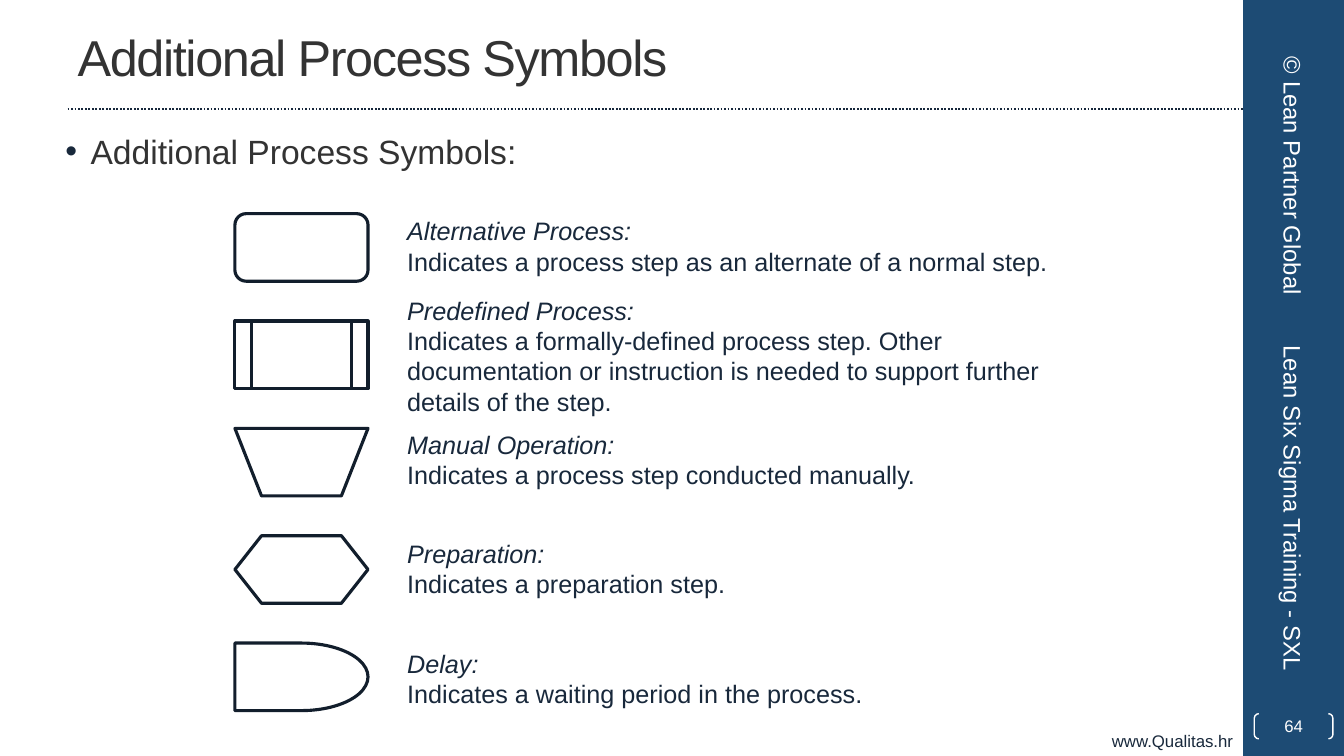
from lxml.etree import SubElement
from pptx import Presentation
from pptx.dml.color import RGBColor
from pptx.enum.dml import MSO_LINE as Dash
from pptx.enum.shapes import MSO_CONNECTOR as Link, MSO_SHAPE as Kind
from pptx.enum.text import MSO_ANCHOR as Anchor, PP_ALIGN as Align
from pptx.oxml.ns import qn
from pptx.util import Inches, Pt

WHITE, BLUE, NAVY = "FFFFFF", "1D4B74", "17273B"
INK, GREY, EDGE = "18283B", "333333", "121E2C"

STEPS = [
    (Kind.FLOWCHART_ALTERNATE_PROCESS, 2.09, 7.23, 0.71, "Alternative Process:",
     "Indicates a process step as an alternate of a normal step."),
    (Kind.FLOWCHART_PREDEFINED_PROCESS, 2.88, 7.14, 1.31, "Predefined Process:",
     "Indicates a formally-defined process step. Other documentation or "
     "instruction is needed to support further details of the step."),
    (Kind.FLOWCHART_MANUAL_OPERATION, 4.21, 6.41, 0.71, "Manual Operation:",
     "Indicates a process step conducted manually."),
    (Kind.FLOWCHART_PREPARATION, 5.29, 5.59, 0.71, "Preparation:",
     "Indicates a preparation step."),
    (Kind.FLOWCHART_DELAY, 6.38, 5.59, 0.71, "Delay:",
     "Indicates a waiting period in the process."),
]


def paint(color, code):
    """Set a fill, line or font colour from a hex string."""
    color.rgb = RGBColor.from_string(code)


def style(para, size, code, align=Align.LEFT, italic=False):
    """Format a whole paragraph."""
    para.alignment = align
    font = para.font
    font.name, font.size, font.italic = "Arial", Pt(size), italic
    paint(font.color, code)


def add_text(slide, box, lines, size, code, align=Align.LEFT, anchor=Anchor.TOP):
    """Add a wrapped text box and return it."""
    shape = slide.shapes.add_textbox(*map(Inches, box))
    frame = shape.text_frame
    frame.word_wrap, frame.vertical_anchor = True, anchor
    frame.text = "\n".join(lines)
    for para in frame.paragraphs:
        style(para, size, code, align)
    return shape


def add_form(slide, kind, box, fill=None, edge=None, width=1):
    """Add a preset shape with an optional fill and outline."""
    shape = slide.shapes.add_shape(kind, *map(Inches, box))
    shape.shadow.inherit = False
    if fill:
        shape.fill.solid()
        paint(shape.fill.fore_color, fill)
    else:
        shape.fill.background()
    if edge:
        paint(shape.line.color, edge)
        shape.line.width = Pt(width)
    else:
        shape.line.fill.background()
    return shape


def add_title(slide, text):
    """Place the title and the dotted rule under it."""
    title = slide.shapes.title
    title.left, title.top, title.width, title.height = map(
        Inches, (0.67, 0.03, 11.11, 1.05))
    frame = title.text_frame
    frame.text, frame.vertical_anchor = text, Anchor.MIDDLE
    para = frame.paragraphs[0]
    style(para, 36, GREY)
    para.runs[0].font._element.set("spc", "-100")
    rule = slide.shapes.add_connector(
        Link.STRAIGHT, *map(Inches, (0.67, 1.08, 12.33, 1.08)))
    paint(rule.line.color, NAVY)
    rule.line.width, rule.line.dash_style = Pt(1.25), Dash.ROUND_DOT
    SubElement(rule._element.spPr, qn("a:effectLst"))


def add_bullet(slide, text):
    """Add the bulleted lead line."""
    shape = add_text(slide, (0.42, 1.25, 11.78, 0.6), [text], 24, GREY)
    props = shape.text_frame.paragraphs[0]._p.get_or_add_pPr()
    props.set("marL", str(Inches(0.38)))
    props.set("indent", str(Inches(-0.25)))
    tint = SubElement(props, qn("a:buClr"))
    SubElement(tint, qn("a:srgbClr"), val=INK)
    SubElement(props, qn("a:buFont"), typeface="Arial")
    SubElement(props, qn("a:buChar"), char="•")
    props.append(props.find(qn("a:defRPr")))


def add_side(slide):
    """Add the side band with its turned labels and page number."""
    add_form(slide, Kind.RECTANGLE, (12.33, 0, 1, 7.5), BLUE)
    for text, box, align in (
            ("© Lean Partner Global", (11.24, 1.48, 3.17, 0.53), Align.CENTER),
            ("Lean Six Sigma Training - SXL", (10.99, 4.9, 3.67, 0.53), Align.LEFT)):
        label = add_text(slide, box, [text], 17, WHITE, align, Anchor.MIDDLE)
        label.rotation = 90
    page = add_form(slide, Kind.DOUBLE_BRACKET, (12.44, 7.08, 0.78, 0.25), None, WHITE)
    page.adjustments[0] = 0.18
    frame = page.text_frame
    frame.margin_left = frame.margin_right = 0
    frame.margin_top = frame.margin_bottom = 0
    frame.text, frame.vertical_anchor = "64", Anchor.MIDDLE
    style(frame.paragraphs[0], 12, WHITE, Align.CENTER)


def add_steps(slide):
    """Add each process symbol with its name and meaning."""
    for row, (kind, top, width, height, name, note) in enumerate(STEPS):
        add_form(slide, kind, (2.33, 2.12 + row * 1.065, 1.32, 0.67), None, EDGE, 2.25)
        label = add_text(slide, (3.94, top, width, height), [name, note], 18, INK)
        label.text_frame.paragraphs[0].font.italic = True


def main():
    """Build and save the slide."""
    deck = Presentation()
    deck.slide_width, deck.slide_height = Inches(13.33), Inches(7.5)
    slide = deck.slides.add_slide(deck.slide_layouts[5])
    add_side(slide)
    add_text(slide, (0, 7.2, 12.33, 0.3), ["www.Qualitas.hr"], 12, INK, Align.RIGHT)
    add_title(slide, "Additional Process Symbols")
    add_bullet(slide, "Additional Process Symbols:")
    add_steps(slide)
    deck.save("out.pptx")


if __name__ == "__main__":
    main()
